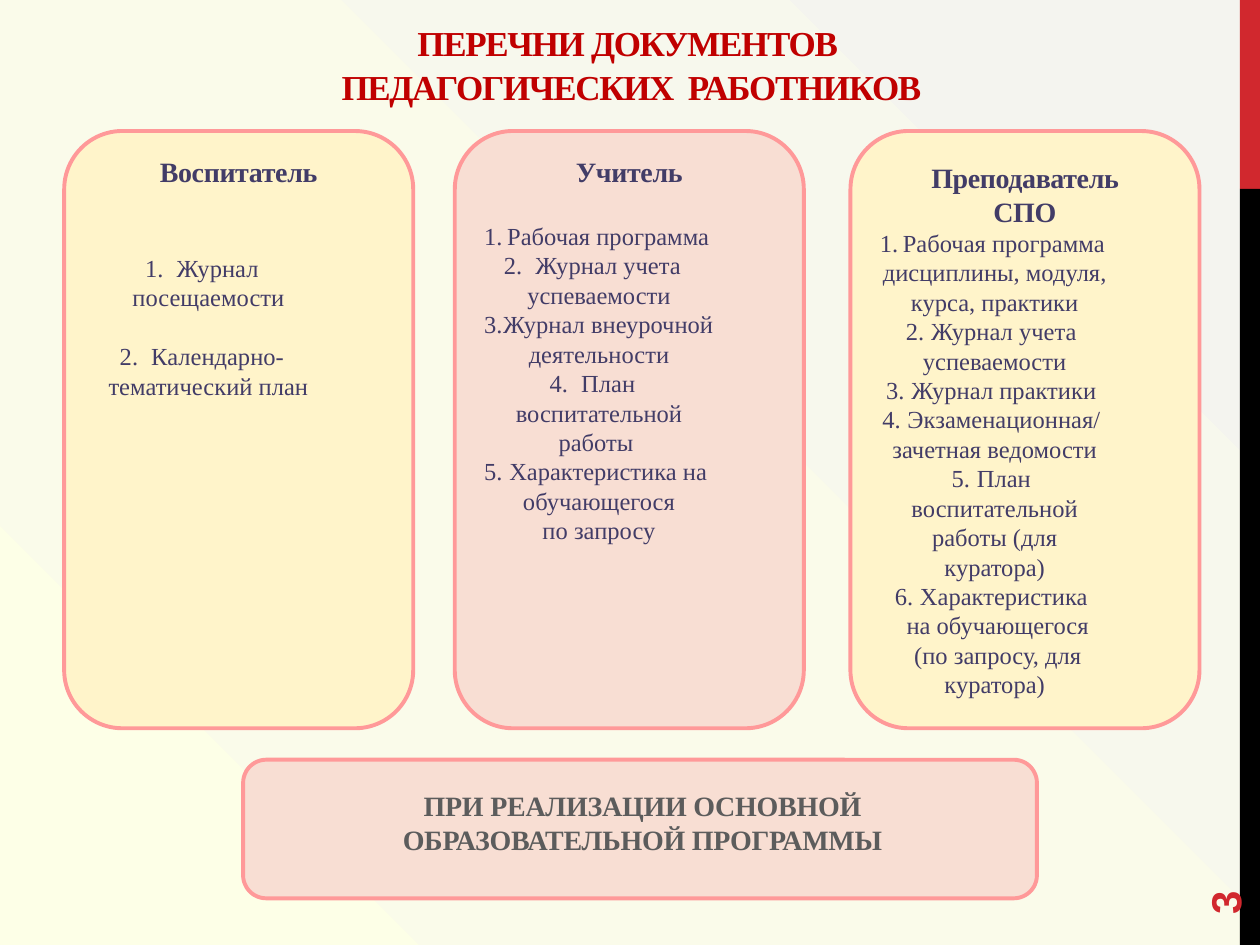
from pptx import Presentation
from pptx.dml.color import RGBColor
from pptx.enum.shapes import MSO_SHAPE
from pptx.enum.text import MSO_ANCHOR, PP_ALIGN
from pptx.oxml import parse_xml
from pptx.oxml.ns import nsdecls
from pptx.util import Inches, Pt

RECT, ROUND = MSO_SHAPE.RECTANGLE, MSO_SHAPE.ROUNDED_RECTANGLE
TOP, MIDDLE = MSO_ANCHOR.TOP, MSO_ANCHOR.MIDDLE
LEFT, CENTER = PP_ALIGN.LEFT, PP_ALIGN.CENTER

RED = RGBColor(0xD1, 0x28, 0x2E)
DARK_RED = RGBColor(0xC0, 0x00, 0x00)
BLACK = RGBColor(0x00, 0x00, 0x00)
CREAM = RGBColor(0xFF, 0xF4, 0xCA)
PEACH = RGBColor(0xF8, 0xDE, 0xD3)
PINK = RGBColor(0xFF, 0x99, 0x99)
VIOLET = RGBColor(0x42, 0x3C, 0x67)
GRAY = RGBColor(0x5C, 0x5C, 0x5C)
BACKGROUND = ((0, "FDFFE7"), (38, "FAFBEA"), (99, "F4F4EF"))

CARDS = [
    (0.51, CREAM, TOP, ["Воспитатель"], 37, 0.25, 17,
     ["Журнал посещаемости", "Календарно-тематический план"], []),
    (3.61, PEACH, TOP, ["Учитель"], 19, 0.25, 0,
     ["Рабочая программа", "Журнал учета успеваемости",
      "Журнал внеурочной деятельности", "План воспитательной работы ",
      "Характеристика на обучающегося"], [" по запросу "]),
    (6.75, CREAM, MIDDLE, ["Преподаватель ", "СПО"], 0, 0.2, 0,
     ["Рабочая программа дисциплины, модуля, курса, практики",
      "Журнал учета успеваемости", "Журнал практики",
      "Экзаменационная/ зачетная ведомости",
      "План воспитательной работы (для куратора)", "Характеристика"],
     [" на обучающегося", " (по запросу, для куратора)"]),
]


class Deck:
    font = "Times New Roman"

    def __init__(self, width, height):
        self.prs = Presentation()
        self.prs.slide_width, self.prs.slide_height = Inches(width), Inches(height)
        self.s = self.prs.slides.add_slide(self.prs.slide_layouts[6])

    def background(self, stops):
        gs = "".join(f'<a:gs pos="{pos * 1000}"><a:srgbClr val="{color}"/></a:gs>'
                     for pos, color in stops)
        self.s.element.cSld.insert(0, parse_xml(
            f'<p:bg {nsdecls("p", "a")}><p:bgPr><a:gradFill rotWithShape="1">'
            f'<a:gsLst>{gs}</a:gsLst><a:path path="circle"><a:fillToRect '
            'l="0" t="100000" r="100000" b="0"/></a:path></a:gradFill>'
            '<a:effectLst/></p:bgPr></p:bg>'))

    def box(self, kind, x, y, w, h, fill, line=None):
        sp = self.s.shapes.add_shape(kind, Inches(x), Inches(y), Inches(w), Inches(h))
        sp.shadow.inherit = False
        sp.fill.solid()
        sp.fill.fore_color.rgb = fill
        if line is None:
            sp.line.fill.background()
        else:
            sp.line.color.rgb = line
            sp.line.width = Pt(2.25)
        return sp

    def text(self, x, y, w, h):
        sp = self.s.shapes.add_textbox(Inches(x), Inches(y), Inches(w), Inches(h))
        sp.text_frame.word_wrap = True
        return sp

    def paragraph(self, tf, text, size, color, bold=True, align=CENTER, before=0,
                  spacing=0, font=None, left=0, indent=0, right=0, numbered=False):
        p = tf.add_paragraph() if tf.text else tf.paragraphs[0]
        p.text = text
        p.alignment = align
        p.space_before = Pt(before)
        p.font.name = font or self.font
        p.font.size, p.font.bold = Pt(size), bold
        p.font.color.rgb = color
        pPr = p._p.get_or_add_pPr()
        for name, value in (("marL", left), ("marR", right), ("indent", indent)):
            pPr.set(name, str(Inches(value)))
        if numbered:
            pPr.find("./{*}defRPr").addprevious(parse_xml(
                f'<a:buAutoNum {nsdecls("a")} type="arabicPeriod"/>'))
        if spacing:
            for r in p.runs:
                r._r.get_or_add_rPr().set("spc", str(round(spacing * 100)))

    def card(self, x, fill, anchor, heading, lead, hang, gap, items, tail):
        tf = self.box(ROUND, x, 1.04, 2.77, 4.74, fill, PINK).text_frame
        tf.word_wrap = True
        tf.vertical_anchor = anchor
        for line in heading:
            self.paragraph(tf, line, 16, VIOLET, before=0.1, spacing=-0.2,
                           left=1.33, indent=-0.94, right=0.39)
        for i, item in enumerate(items):
            self.paragraph(tf, item, 14, VIOLET, bold=False, indent=-hang, right=0.48,
                           before=gap if i else lead, numbered=True)
        for line in tail:
            self.paragraph(tf, line, 14, VIOLET, bold=False, right=0.48)


def main():
    deck = Deck(10, 7.5)
    deck.background(BACKGROUND)
    deck.box(RECT, 9.84, 0, 0.16, 1.5, RED)
    deck.box(RECT, 9.84, 1.5, 0.16, 6, BLACK)

    number = deck.text(9, 6.44, 1.44, 0.4)
    number.rotation = 270
    number.text_frame.vertical_anchor = MIDDLE
    deck.paragraph(number.text_frame, "3", 24, RED, align=LEFT, font="Arial")

    tf = deck.text(0.2, 0.16, 9.61, 0.7).text_frame
    tf.margin_left = tf.margin_right = tf.margin_bottom = 0
    tf.margin_top = Inches(0.01)
    for line in ("ПЕРЕЧНИ ДОКУМЕНТОВ ", "ПЕДАГОГИЧЕСКИХ  РАБОТНИКОВ"):
        deck.paragraph(tf, line, 20, DARK_RED, before=1, spacing=-0.8, left=0.01)

    for card in CARDS:
        deck.card(*card)

    deck.box(ROUND, 1.93, 6.03, 6.3, 1.1, PEACH, PINK)
    tf = deck.text(2.21, 6.21, 5.78, 0.64).text_frame
    deck.paragraph(tf, "ПРИ РЕАЛИЗАЦИИ ОСНОВНОЙ ОБРАЗОВАТЕЛЬНОЙ ПРОГРАММЫ",
                   16, GRAY, before=18.9, spacing=-0.1)

    deck.prs.save("out.pptx")


if __name__ == "__main__":
    main()
